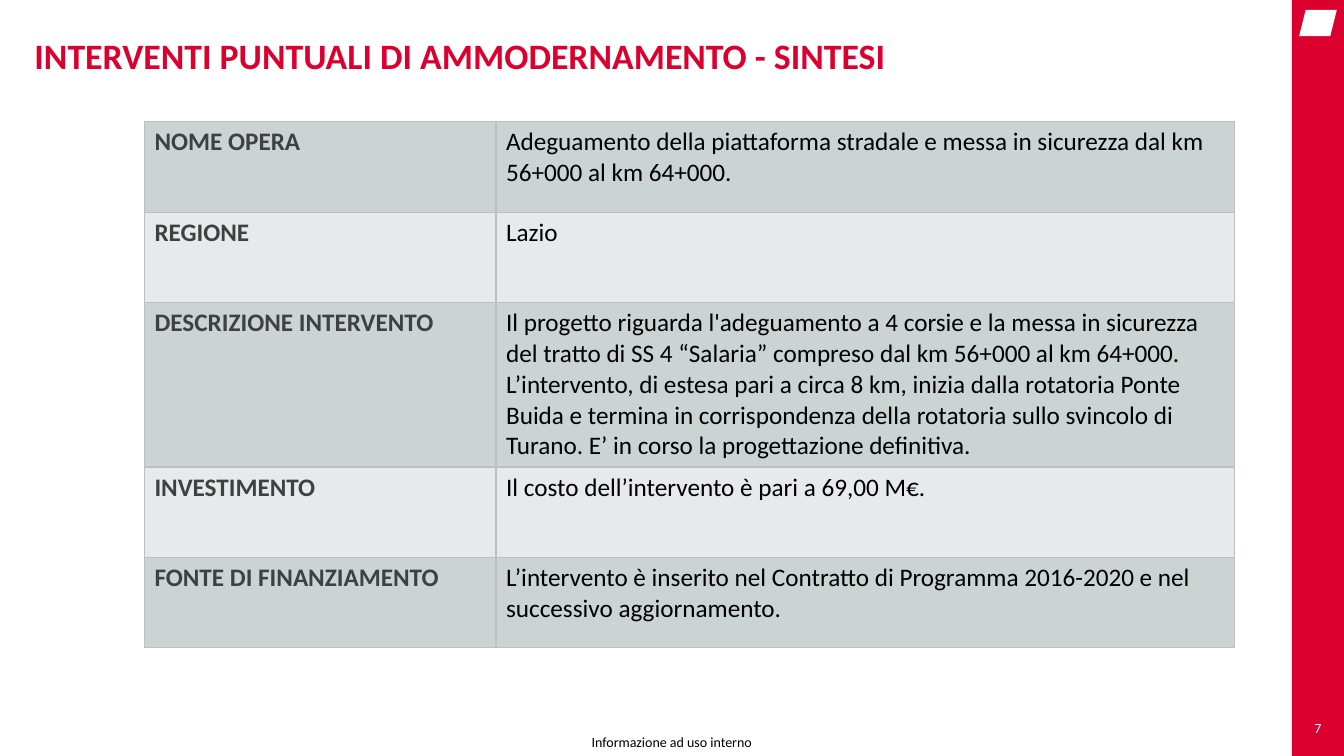
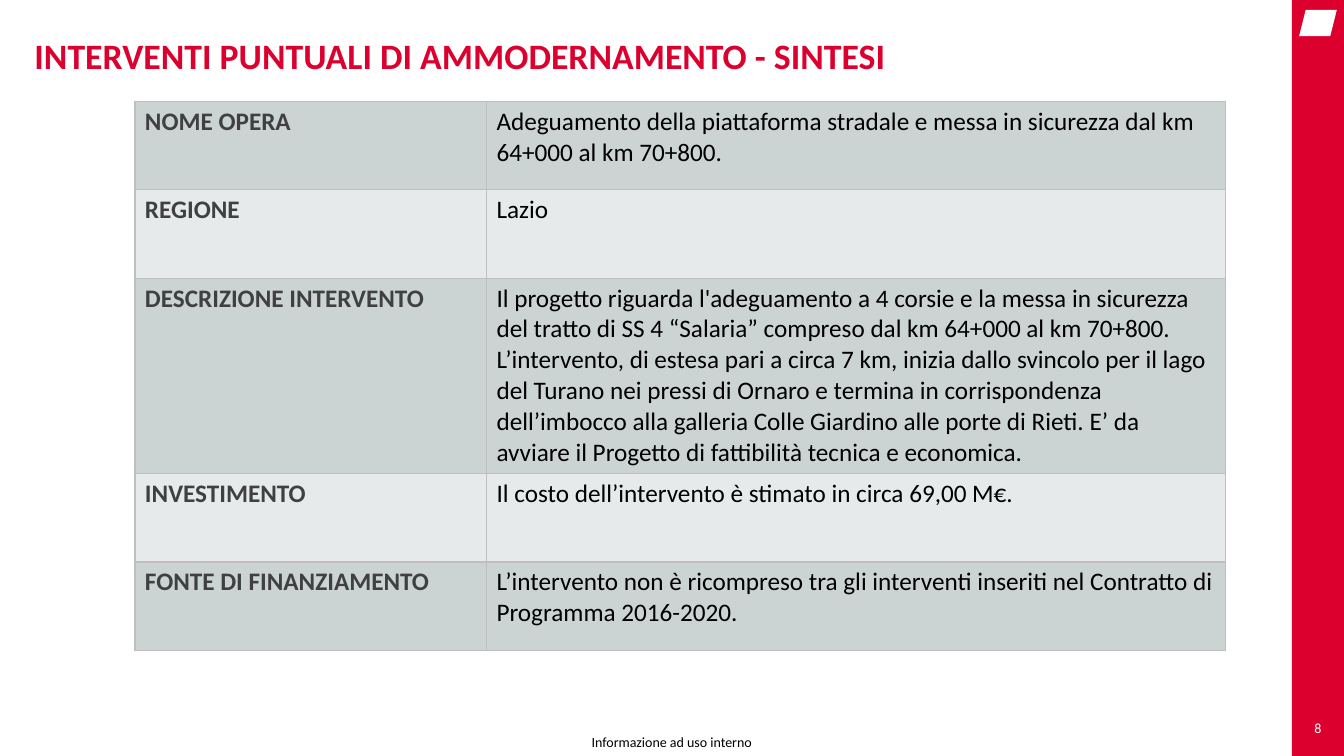
from lxml.etree import SubElement
from pptx import Presentation
from pptx.dml.color import RGBColor
from pptx.enum.shapes import MSO_SHAPE as Preset
from pptx.enum.text import MSO_ANCHOR as Anchor, PP_ALIGN as Align
from pptx.oxml.ns import qn
from pptx.util import Cm, Pt

# Shared look
FONT = "Calibri"
RED, WHITE, BLACK, LABEL_GREY = "DC002E", "FFFFFF", "000000", "404040"
ROW_FILLS = ("CCD3D3", "E7EAEA")
BORDER = "BFBFBF"
PAGE_WIDTH, PAGE_HEIGHT = 33.87, 19.05
BAND_LEFT, BAND_WIDTH = 32.56, 1.31
COLUMN_WIDTHS = (8.86, 18.62)

TITLE = "INTERVENTI PUNTUALI DI AMMODERNAMENTO - SINTESI"
FOOTER = "Informazione ad uso interno"
LABELS = ("NOME OPERA", "REGIONE", "DESCRIZIONE INTERVENTO",
          "INVESTIMENTO", "FONTE DI FINANZIAMENTO")

# One entry per slide: number, table position, row heights, column of answers
SUMMARIES = (
    dict(number=7, left=3.64, top=3.07, row_height=2.28, description_height=4.14,
         answers=(
             "Adeguamento della piattaforma stradale e messa in sicurezza dal km "
             "56+000 al km 64+000.",
             "Lazio",
             "Il progetto riguarda l'adeguamento a 4 corsie e la messa in sicurezza "
             "del tratto di SS 4 “Salaria” compreso dal km 56+000 al km 64+000. "
             "L’intervento, di estesa pari a circa 8 km, inizia dalla rotatoria Ponte "
             "Buida e termina in corrispondenza della rotatoria sullo svincolo di "
             "Turano. E’ in corso la progettazione definitiva.",
             "Il costo dell’intervento è pari a 69,00 M€.",
             "L’intervento è inserito nel Contratto di Programma 2016-2020 e nel "
             "successivo aggiornamento.")),
    dict(number=8, left=3.4, top=2.55, row_height=2.23, description_height=4.92,
         answers=(
             "Adeguamento della piattaforma stradale e messa in sicurezza dal km "
             "64+000 al km 70+800.",
             "Lazio",
             "Il progetto riguarda l'adeguamento a 4 corsie e la messa in sicurezza "
             "del tratto di SS 4 “Salaria” compreso dal km 64+000 al km 70+800. "
             "L’intervento, di estesa pari a circa 7 km, inizia dallo svincolo per il "
             "lago del Turano nei pressi di Ornaro e termina in corrispondenza "
             "dell’imbocco alla galleria Colle Giardino alle porte di Rieti. E’ da "
             "avviare il Progetto di fattibilità tecnica e economica.",
             "Il costo dell’intervento è stimato in circa 69,00 M€.",
             "L’intervento non è ricompreso tra gli interventi inseriti nel Contratto "
             "di Programma 2016-2020.")),
)


def color(value):
    return RGBColor.from_string(value)


def style_text(para, size, ink, bold=False):
    font = para.font
    font.name, font.size, font.bold = FONT, Pt(size), bold
    font.color.rgb = color(ink)


def add_text(page, text, left, top, width, height, size, ink,
             bold=False, align=Align.CENTER):
    box = page.shapes.add_textbox(Cm(left), Cm(top), Cm(width), Cm(height))
    frame = box.text_frame
    frame.word_wrap = True
    frame.vertical_anchor = Anchor.MIDDLE
    frame.margin_left = frame.margin_right = 0
    frame.margin_top = frame.margin_bottom = 0
    para = frame.paragraphs[0]
    para.text, para.alignment = text, align
    style_text(para, size, ink, bold)


def add_block(page, preset, left, top, width, height, fill):
    block = page.shapes.add_shape(preset, Cm(left), Cm(top), Cm(width), Cm(height))
    block.shadow.inherit = False
    block.fill.solid()
    block.fill.fore_color.rgb = color(fill)
    block.line.fill.background()


def add_frame(page, number):
    """Red side band with emblem and page number, footer and title."""
    add_block(page, Preset.RECTANGLE, BAND_LEFT, 0, BAND_WIDTH, PAGE_HEIGHT, RED)
    add_block(page, Preset.PARALLELOGRAM, 32.74, 0.25, 0.95, 0.66, WHITE)
    add_text(page, str(number), BAND_LEFT, 18.03, BAND_WIDTH, 0.64, 10, WHITE)
    add_text(page, FOOTER, 14.48, 18.4, 4.9, 0.6, 10, BLACK)
    add_text(page, TITLE, 0.87, 0.76, 31.3, 1.24, 25.5, RED, True, Align.LEFT)


def set_borders(cell):
    properties = cell._tc.get_or_add_tcPr()
    for side in ("a:lnL", "a:lnR", "a:lnT", "a:lnB"):
        line = SubElement(properties, qn(side), w=str(Pt(1)))
        SubElement(SubElement(line, qn("a:solidFill")), qn("a:srgbClr"), val=BORDER)


def fill_cell(cell, text, fill, ink, bold):
    set_borders(cell)
    cell.fill.solid()
    cell.fill.fore_color.rgb = color(fill)
    cell.text = text
    style_text(cell.text_frame.paragraphs[0], 18, ink, bold)


def add_summary_table(page, left, top, row_height, description_height, answers):
    heights = [description_height if label.startswith("DESCRIZIONE") else row_height
               for label in LABELS]
    table = page.shapes.add_table(
        len(LABELS), len(COLUMN_WIDTHS), Cm(left), Cm(top),
        Cm(sum(COLUMN_WIDTHS)), Cm(sum(heights))).table
    table.first_row = table.horz_banding = False
    for column, width in zip(table.columns, COLUMN_WIDTHS):
        column.width = Cm(width)
    for index, (label, answer) in enumerate(zip(LABELS, answers)):
        table.rows[index].height = Cm(heights[index])
        fill = ROW_FILLS[index % 2]
        fill_cell(table.cell(index, 0), label, fill, LABEL_GREY, True)
        fill_cell(table.cell(index, 1), answer, fill, BLACK, False)


def main():
    deck = Presentation()
    deck.slide_width, deck.slide_height = Cm(PAGE_WIDTH), Cm(PAGE_HEIGHT)
    for summary in SUMMARIES:
        page = deck.slides.add_slide(deck.slide_layouts[6])
        content = dict(summary)
        add_frame(page, content.pop("number"))
        add_summary_table(page, **content)
    deck.save("out.pptx")


if __name__ == "__main__":
    main()
